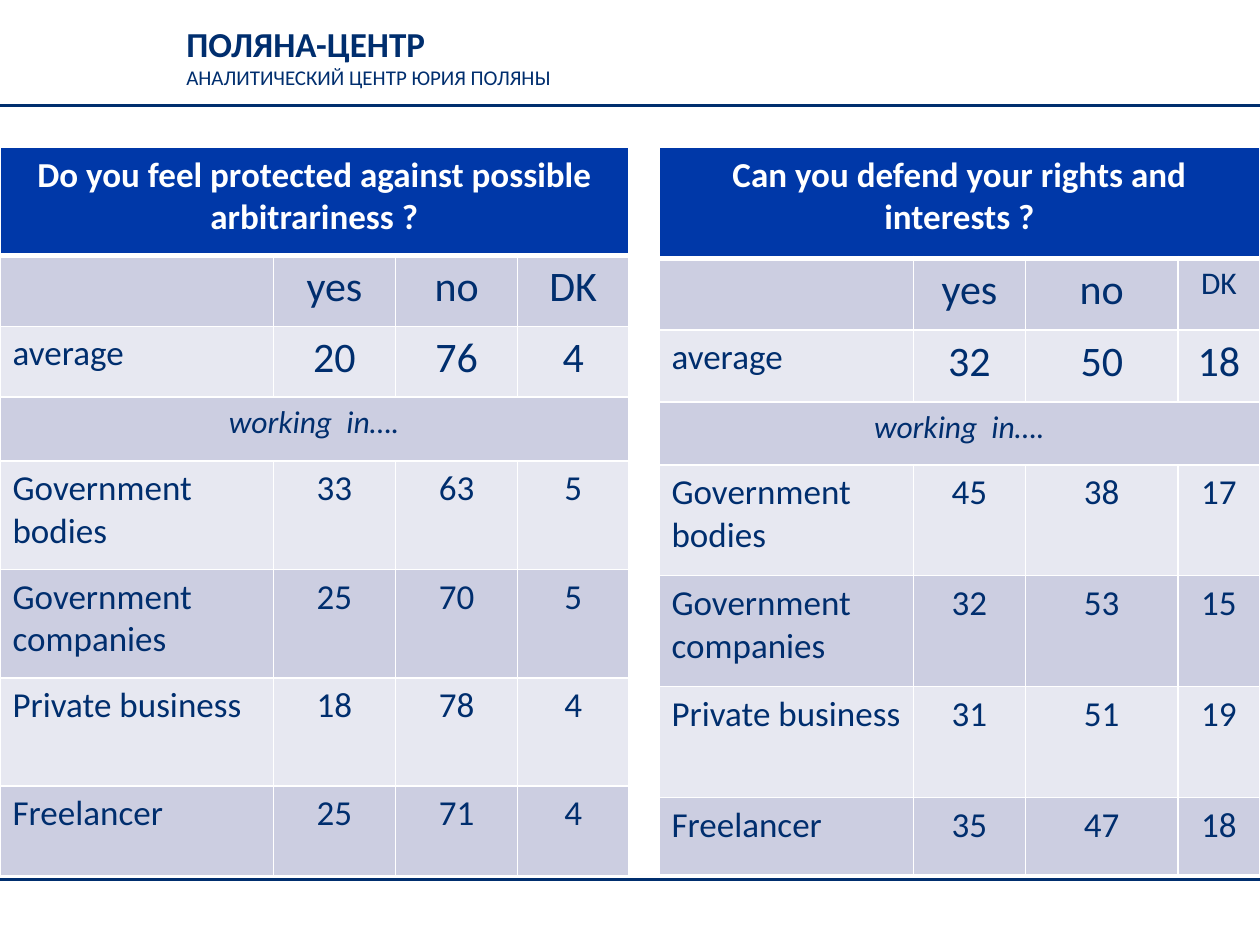
from lxml.etree import SubElement
from pptx import Presentation
from pptx.dml.color import RGBColor
from pptx.enum.shapes import MSO_CONNECTOR as Connector
from pptx.enum.text import PP_ALIGN as Align
from pptx.oxml.ns import qn
from pptx.util import Inches, Pt

NAVY = RGBColor(0x00, 0x2E, 0x6E)
BLUE = RGBColor(0x00, 0x38, 0xA8)
DARK_BAND = RGBColor(0xCC, 0xCE, 0xE1)
LIGHT_BAND = RGBColor(0xE7, 0xE8, 0xF1)
WHITE = RGBColor(0xFF, 0xFF, 0xFF)


def write(para, text, size=20, color=NAVY, bold=False, italic=False, align=Align.LEFT):
    para.alignment = align
    span = para.add_run()
    span.text = text
    font = span.font
    font.name, font.size, font.bold, font.italic = "Calibri", Pt(size), bold, italic
    font.color.rgb = color


def add_borders(cell, bottom=1):
    properties = cell._tc.get_or_add_tcPr()
    for side, width in (("L", 1), ("R", 1), ("T", 1), ("B", bottom)):
        line = SubElement(properties, qn(f"a:ln{side}"), w=str(Pt(width)))
        fill = SubElement(line, qn("a:solidFill"))
        SubElement(fill, qn("a:srgbClr"), val=str(WHITE))


deck = Presentation()
deck.slide_width, deck.slide_height = Inches(10), Inches(7.5)
page = deck.slides.add_slide(deck.slide_layouts[6])

# Organisation name
box = page.shapes.add_textbox(Inches(1.38), Inches(0.13), Inches(5.28), Inches(0.64))
frame = box.text_frame
frame.word_wrap = True
write(frame.paragraphs[0], "ПОЛЯНА-ЦЕНТР", size=20, bold=True)
write(frame.add_paragraph(), "АНАЛИТИЧЕСКИЙ ЦЕНТР ЮРИЯ ПОЛЯНЫ", size=12)

# Rules below the header and above the footer
for y in (0.84, 6.98):
    rule = page.shapes.add_connector(
        Connector.STRAIGHT, Inches(0), Inches(y), Inches(10), Inches(y))
    rule.line.color.rgb = NAVY
    rule.line.width = Pt(1.5)
    SubElement(rule._element.spPr, qn("a:effectLst"))

# Survey tables: one answer triple (yes, no, DK) per label
labels = ["average", "Government bodies", "Government companies",
          "Private business", "Freelancer"]
surveys = [
    dict(question="Can you defend your rights and interests ?", left=5.23, dk_size=18,
         widths=[2.02, 0.89, 1.21, 0.65],
         heights=[0.88, 0.57, 0.57, 0.5, 0.88, 0.88, 0.88, 0.61],
         answers=[(32, 50, 18), (45, 38, 17), (32, 53, 15), (31, 51, 19), (35, 47, 18)]),
    dict(question="Do you feel protected against possible arbitrariness ?", left=0, dk_size=24,
         widths=[2.17, 0.97, 0.97, 0.88],
         heights=[0.86, 0.56, 0.56, 0.51, 0.86, 0.86, 0.86, 0.71],
         answers=[(20, 76, 4), (33, 63, 5), (25, 70, 5), (18, 78, 4), (25, 71, 4)]),
]

for survey in surveys:
    widths, heights = survey["widths"], survey["heights"]
    table = page.shapes.add_table(
        len(heights), len(widths), Inches(survey["left"]), Inches(1.17),
        Inches(sum(widths)), Inches(sum(heights))).table
    for column, width in zip(table.columns, widths):
        column.width = Inches(width)
    for row, height in zip(table.rows, heights):
        row.height = Inches(height)

    # Borders and alternating bands
    for r, row in enumerate(table.rows):
        for cell in row.cells:
            add_borders(cell, bottom=3 if r == 0 else 1)
            cell.fill.solid()
            cell.fill.fore_color.rgb = BLUE if r == 0 else DARK_BAND if r % 2 else LIGHT_BAND

    # Full-width rows
    for r in (0, 3):
        table.cell(r, 0).merge(table.cell(r, 3))
    write(table.cell(0, 0).text_frame.paragraphs[0], survey["question"],
          color=WHITE, bold=True, align=Align.CENTER)
    write(table.cell(3, 0).text_frame.paragraphs[0], "working  in….",
          size=18, italic=True, align=Align.CENTER)

    # Column heads
    heads = [("yes", 24), ("no", 24), ("DK", survey["dk_size"])]
    for c, (head, size) in enumerate(heads, start=1):
        write(table.cell(1, c).text_frame.paragraphs[0], head, size=size, align=Align.CENTER)

    # Labels and answers
    for r, label, answers in zip((2, 4, 5, 6, 7), labels, survey["answers"]):
        write(table.cell(r, 0).text_frame.paragraphs[0], label)
        for c, answer in enumerate(answers, start=1):
            write(table.cell(r, c).text_frame.paragraphs[0], str(answer),
                  size=24 if r == 2 else 20, align=Align.CENTER)

deck.save("out.pptx")
